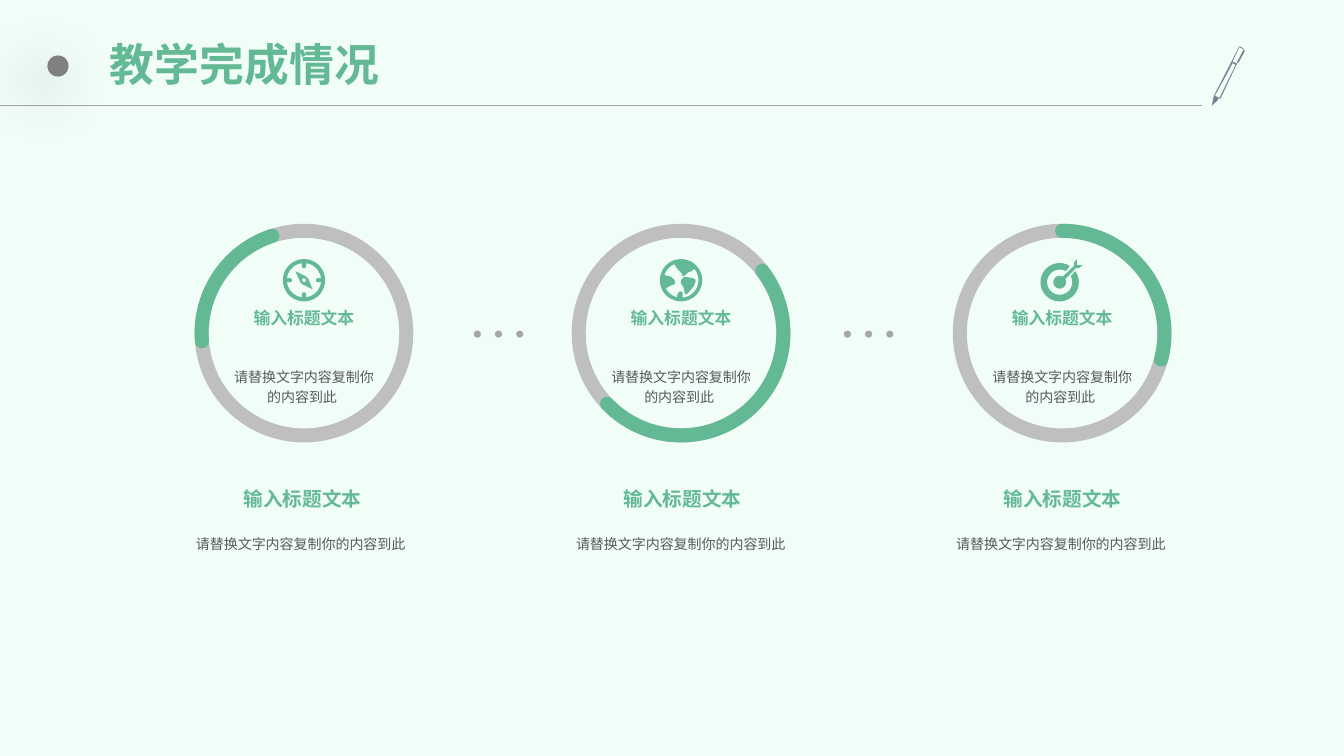
from math import cos, radians, sin

from lxml import etree
from pptx import Presentation
from pptx import util as u
from pptx.dml.color import RGBColor
from pptx.enum import shapes, text
from pptx.oxml import ns

PX = 9144  # EMU in one px, 100 px to the inch

MINT = RGBColor(0xF1, 0xFE, 0xF7)
GREEN = RGBColor(0x63, 0xB9, 0x94)
RING_GREY = RGBColor(0xBF, 0xBF, 0xBF)
DOT_GREY = RGBColor(0xA6, 0xA6, 0xA6)
BULLET_GREY = RGBColor(0x80, 0x80, 0x80)
TEXT_GREY = RGBColor(0x59, 0x59, 0x59)
PEN_BLUE = RGBColor(0x77, 0x84, 0x95)

TITLE_FONT = "Noto Sans CJK SC"
BODY_FONT = "Arial"
HEADING = "输入标题文本"
BODY = "请替换文字内容复制你的内容到此 "
CAPTION_STEP = 377
DOT_STEP = 21


def arc(cx, cy, radius, start, end, steps=36):
    """Points along a circle, clockwise from the right, in degrees."""
    angles = [radians(start + (end - start) * i / steps) for i in range(steps + 1)]
    return [(cx + radius * cos(a), cy + radius * sin(a)) for a in angles]


def compass_face(cx, cy):
    """Inner disc with a tick cut in at each quarter."""
    points = []
    for quarter in range(0, 360, 90):
        c, s = cos(radians(quarter)), sin(radians(quarter))
        tick = [(16.8, -2), (13.5, -2), (12, -1.2), (12, 1.2), (13.5, 2), (16.8, 2)]
        points += [(cx + x * c - y * s, cy + x * s + y * c) for x, y in tick]
        points += arc(cx, cy, 17, quarter + 8, quarter + 82, 10)
    return points


COMPASS = [
    arc(21.5, 21, 21, 0, 360),
    compass_face(21.5, 21),
    [(23, 17), (13, 12), (18, 23), (20, 25), (30, 30), (26, 20)],
    arc(21.5, 21, 2, 0, 360, 12),
]
GLOBE = [
    arc(21.5, 21, 21, 0, 360),
    [(23, 38), (23, 33), (21, 32), (19, 33), (17.5, 36), (18, 38)]
    + arc(21.5, 21, 17.3, 103, 150, 8)
    + [(8, 28), (12, 26), (15, 25), (15.5, 23), (15, 21), (12, 18), (10, 17), (5, 16)]
    + arc(21.5, 21, 17.3, 197, 247, 8)
    + [(16, 7), (18, 10), (22, 14), (23, 16.5), (24, 17), (26, 16), (28, 13.5),
       (32, 12), (34, 10)]
    + arc(21.5, 21, 17.3, -40, 84, 16),
    [(33, 19), (28, 18), (24, 18), (22, 20), (21, 23), (22, 25), (24, 28), (25, 33),
     (25.5, 35), (27, 35), (30, 32), (34, 27), (36, 22), (35.5, 20)],
]
TARGET = [
    arc(19, 23, 12.5, -28, 299) + arc(19, 23, 19, 302, -36),
    [(36, 6), (36, 0), (33, 4), (33, 7), (22, 17.5)]
    + arc(19, 23, 6.3, -61, -388)
    + [(35, 9), (38, 9), (42, 6)],
]
PEN = [
    [(32, 3), (30, 1.2), (27, 0), (19.5, 15), (2, 49), (1, 53), (0, 59), (3, 56),
     (5.5, 54), (6.5, 51.5), (8.5, 52), (24.5, 18), (31, 6), (26, 15.5), (26.5, 16),
     (32.5, 5)],
    [(23.5, 18.5), (7.5, 51.2), (3, 49), (14.5, 28), (20.5, 16.5)],
    [(24.2, 17), (20.5, 15), (27.2, 0.8), (31.5, 3)],
]


def paint(shape, fill=None, line=None, width=10):
    shape.shadow.inherit = False
    if fill is None:
        shape.fill.background()
    else:
        shape.fill.solid()
        shape.fill.fore_color.rgb = fill
    if line is None:
        shape.line.fill.background()
    else:
        shape.line.color.rgb = line
        shape.line.width = u.Pt(width)


def add_preset(page, kind, left, top, size, **colours):
    shape = page.shapes.add_shape(kind, left * PX, top * PX, size * PX, size * PX)
    paint(shape, **colours)
    return shape


def add_outline(page, left, top, contours, colour):
    """Filled drawing; a contour inside another one cuts a hole."""
    scaled = [[(x * PX, y * PX) for x, y in points] for points in contours]
    builder = page.shapes.build_freeform(*scaled[0][0])
    builder.add_line_segments(scaled[0][1:], close=True)
    for points in scaled[1:]:
        builder.move_to(*points[0])
        builder.add_line_segments(points[1:], close=True)
    paint(builder.convert_to_shape(left * PX, top * PX), fill=colour)


def write(shape, words, size, colour, font=BODY_FONT, bold=False, spacing=None,
          align=text.PP_ALIGN.CENTER):
    para = shape.text_frame.paragraphs[0]
    para.alignment = align
    para.line_spacing = spacing
    span = para.add_run()
    span.text = words
    span.font.size = u.Pt(size)
    span.font.bold = bold
    span.font.name = font
    span.font.color.rgb = colour
    east_asian = etree.SubElement(span.font._element, ns.qn("a:ea"))
    east_asian.set("typeface", font)


def set_frame(shape, anchor, side=0, edge=0):
    frame = shape.text_frame
    frame.word_wrap = True
    frame.vertical_anchor = anchor
    frame.margin_left = frame.margin_right = side * PX
    frame.margin_top = frame.margin_bottom = edge * PX


def add_heading(page, left, top, width, height, size):
    box = page.shapes.add_textbox(left * PX, top * PX, width * PX, height * PX)
    box.text_frame.word_wrap = False
    write(box, HEADING, size, GREEN, bold=True)


def add_description(page, left, top, width, height):
    box = page.shapes.add_textbox(left * PX, top * PX, width * PX, height * PX)
    set_frame(box, text.MSO_ANCHOR.MIDDLE)
    write(box, BODY, 10, TEXT_GREY, spacing=1.2)


def add_ring(page, left, start, end, icon):
    """Grey ring with its text, a green arc from start to end degrees, and an icon."""
    ring = add_preset(page, shapes.MSO_SHAPE.OVAL, left, 229, 203, line=RING_GREY)
    set_frame(ring, text.MSO_ANCHOR.BOTTOM)
    write(ring, BODY, 10, TEXT_GREY, spacing=1.2)
    progress = add_preset(page, shapes.MSO_SHAPE.ARC, left, 229, 203, line=GREEN)
    progress.adjustments[0] = start * 0.6
    progress.adjustments[1] = end * 0.6
    progress.line._get_or_add_ln().set("cap", "rnd")
    add_outline(page, left + 80, 257, icon, GREEN)
    add_heading(page, left + 41, 300, 121, 30, 12)


def add_header(page):
    title = page.shapes.title
    title.left, title.top, title.width, title.height = (
        n * PX for n in (102, 19, 1091, 94))
    set_frame(title, text.MSO_ANCHOR.MIDDLE, 7, 4)
    write(title, "教学完成情况", 32, GREEN, TITLE_FONT, True, 0.9, text.PP_ALIGN.LEFT)

    rule = page.shapes.add_connector(
        shapes.MSO_CONNECTOR.STRAIGHT, 0, 105 * PX, 1192 * PX, 105 * PX)
    rule.line.color.rgb = DOT_GREY
    rule.line.width = u.Pt(0.75)
    etree.SubElement(rule._element.spPr, ns.qn("a:effectLst"))

    bullet = add_preset(page, shapes.MSO_SHAPE.OVAL, 47, 55, 21, fill=BULLET_GREY)
    effects = bullet._element.spPr.find(ns.qn("a:effectLst"))
    shadow = etree.SubElement(
        effects, ns.qn("a:outerShdw"), blurRad=str(u.Pt(40)), dist=str(u.Pt(22)),
        dir="8100000", sx="170000", sy="170000", algn="bl", rotWithShape="0")
    black = etree.SubElement(shadow, ns.qn("a:srgbClr"), val="000000")
    etree.SubElement(black, ns.qn("a:alpha"), val="15000")

    add_outline(page, 1202, 46, PEN, PEN_BLUE)


def main():
    deck = Presentation()
    deck.slide_width, deck.slide_height = 1333 * PX, 750 * PX
    page = deck.slides.add_slide(deck.slide_layouts[5])
    page.background.fill.solid()
    page.background.fill.fore_color.rgb = MINT
    add_header(page)

    for left in (470, 837):
        for i in range(3):
            add_preset(page, shapes.MSO_SHAPE.OVAL, left + i * DOT_STEP, 328, 7,
                       fill=DOT_GREY)

    rings = [(200, 175.48, 252.04, COMPASS),
             (574, 322.47, 136.32, GLOBE),
             (952, 270, 14.97, TARGET)]
    for i, ring in enumerate(rings):
        add_ring(page, *ring)
        add_heading(page, 231 + i * CAPTION_STEP, 478, 138, 34, 14)
        add_description(page, 189 + i * CAPTION_STEP, 513, 222, 50)
    deck.save("out.pptx")


if __name__ == "__main__":
    main()
